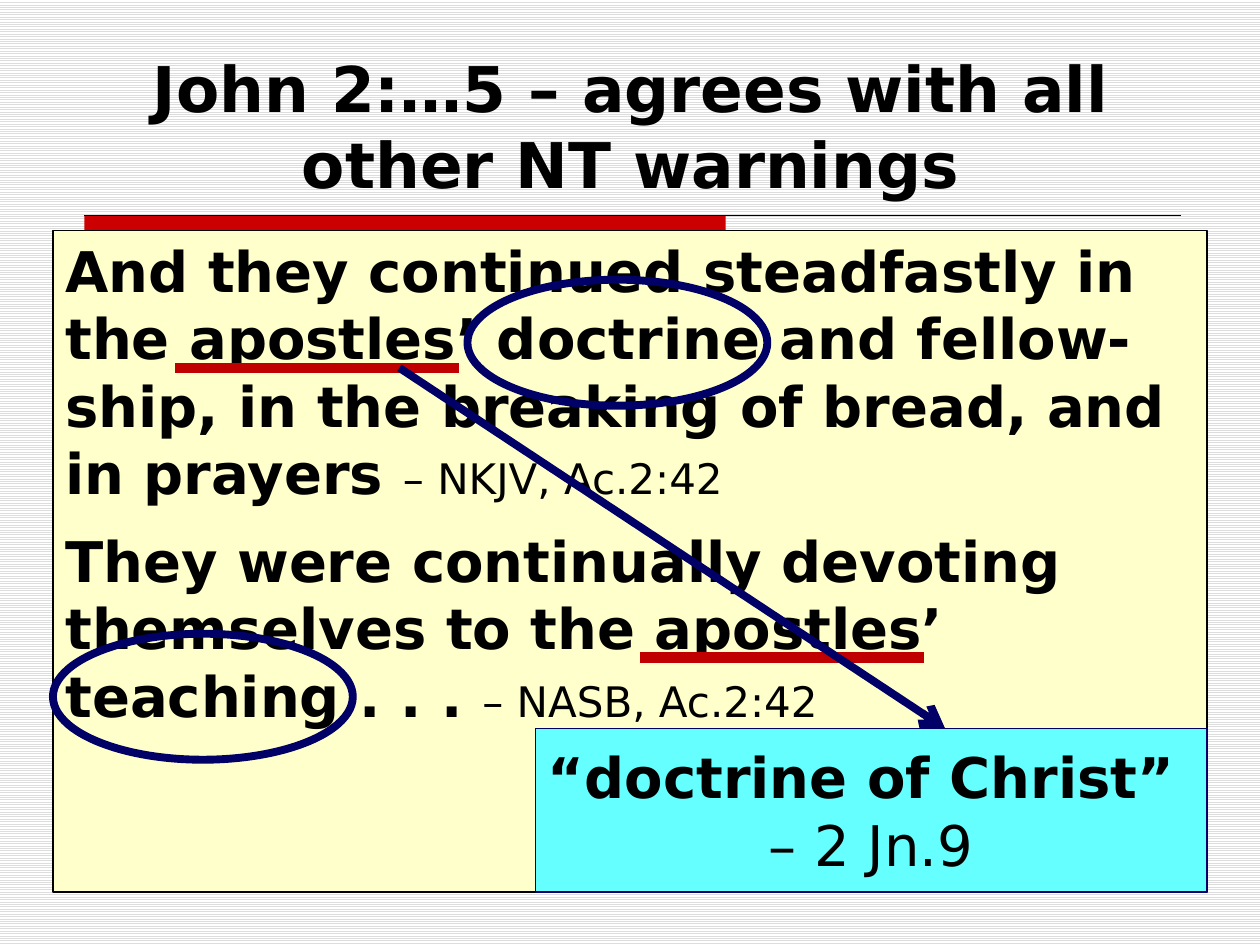
from pptx import Presentation, util as u
from pptx.dml.color import RGBColor
from pptx.enum import dml, shapes, text
from pptx.oxml.ns import qn
from lxml import etree

W, H = 10, 7.5
FONT = "DejaVu Sans"
NAVY, RED, BLACK = "000066", "C00000", "000000"
LEFT, RIGHT, BOTTOM = 0.42, 9.58, 7.08  # edges of the passage panel


def color(value):
    return RGBColor.from_string(value)


def box(slide, kind, x, y, w, h, fill=None, line=None, width=0.75):
    s = slide.shapes.add_shape(kind, *map(u.Inches, (x, y, w, h)))
    s.shadow.inherit = False
    if fill:
        s.fill.solid()
        s.fill.fore_color.rgb = color(fill)
    else:
        s.fill.background()
    if line:
        s.line.color.rgb = color(line)
        s.line.width = u.Pt(width)
    else:
        s.line.fill.background()
    return s


def line(slide, start, end, stroke, width, arrow=False):
    c = slide.shapes.add_connector(
        shapes.MSO_CONNECTOR.STRAIGHT, *map(u.Inches, (*start, *end)))
    c.line.color.rgb = color(stroke)
    c.line.width = u.Pt(width)
    sp_pr = c._element.spPr
    etree.SubElement(sp_pr, qn("a:effectLst"))
    if arrow:
        etree.SubElement(sp_pr.find(qn("a:ln")), qn("a:tailEnd"), type="arrow")


def write(p, content, size=32, bold=True):
    r = p.add_run()
    r.text = content
    r.font.name, r.font.size, r.font.bold = FONT, u.Pt(size), bold
    r.font.color.rgb = color(BLACK)


def frame(s, align, anchor, inset=0.1):
    tf = s.text_frame
    tf.word_wrap = True
    tf.auto_size = text.MSO_AUTO_SIZE.NONE
    tf.vertical_anchor = anchor
    tf.margin_left = tf.margin_right = u.Inches(inset)
    tf.paragraphs[0].alignment = align
    return tf


def add_title(slide, content):
    s = slide.shapes.title
    s.left, s.top, s.width, s.height = map(u.Inches, (0.63, 0.33, 8.75, 1.33))
    tf = frame(s, text.PP_ALIGN.CENTER, text.MSO_ANCHOR.MIDDLE)
    write(tf.paragraphs[0], content, size=36)


def add_passages(slide, passages):
    s = box(slide, shapes.MSO_SHAPE.RECTANGLE, LEFT, 1.83,
            RIGHT - LEFT, BOTTOM - 1.83, "FFFFCC", BLACK)
    tf = frame(s, text.PP_ALIGN.LEFT, text.MSO_ANCHOR.TOP)
    for i, (verse, source) in enumerate(passages):
        p = tf.add_paragraph() if i else tf.paragraphs[0]
        p.alignment = text.PP_ALIGN.LEFT
        if i < len(passages) - 1:
            p.space_after = u.Pt(12)
        write(p, verse)
        write(p, source, size=24, bold=False)


def add_conclusion(slide, phrase, source):
    s = box(slide, shapes.MSO_SHAPE.RECTANGLE, 4.25, 5.78,
            RIGHT - 4.25, BOTTOM - 5.78, "66FFFF", NAVY)
    # Narrow insets keep the phrase and its closing space on one line
    tf = frame(s, text.PP_ALIGN.CENTER, text.MSO_ANCHOR.MIDDLE, inset=0.02)
    p = tf.paragraphs[0]
    write(p, phrase)
    p.add_line_break()
    write(p, source, bold=False)


def main():
    prs = Presentation()
    prs.slide_width, prs.slide_height = u.Inches(W), u.Inches(H)
    slide = prs.slides.add_slide(prs.slide_layouts[5])

    # Finely ruled background
    fill = slide.background.fill
    fill.patterned()
    fill.pattern = dml.MSO_PATTERN.LIGHT_HORIZONTAL
    fill.fore_color.rgb, fill.back_color.rgb = color("DDDDDD"), color("FFFFFF")

    # Title with its bar and rule
    box(slide, shapes.MSO_SHAPE.RECTANGLE, 0.67, 1.71, 5.09, 0.12, "CC0000")
    line(slide, (0.67, 1.71), (9.37, 1.71), BLACK, 0.75)
    add_title(slide, "John 2:…5 – agrees with all other NT warnings")

    # The verse in two translations
    add_passages(slide, [
        ("And they continued steadfastly in the apostles’ doctrine and "
         "fellow-ship, in the breaking of bread, and in prayers ",
         "– NKJV, Ac.2:42"),
        ("They were continually devoting themselves to the apostles’ "
         "teaching . . . ", "– NASB, Ac.2:42"),
    ])

    # Circled and underlined key words
    for x, y in ((3.71, 2.22), (LEFT, 5.03)):
        box(slide, shapes.MSO_SHAPE.OVAL, x, y, 2.38, 1, line=NAVY, width=4.5)
    for x, y in ((1.39, 2.92), (5.08, 5.22)):
        line(slide, (x, y), (x + 2.25, y), RED, 6)

    # Arrow to the conclusion
    line(slide, (3.17, 2.92), (7.5, 5.78), NAVY, 4.5, arrow=True)
    add_conclusion(slide, "“doctrine of Christ” ", "– 2 Jn.9")

    prs.save("out.pptx")


if __name__ == "__main__":
    main()
